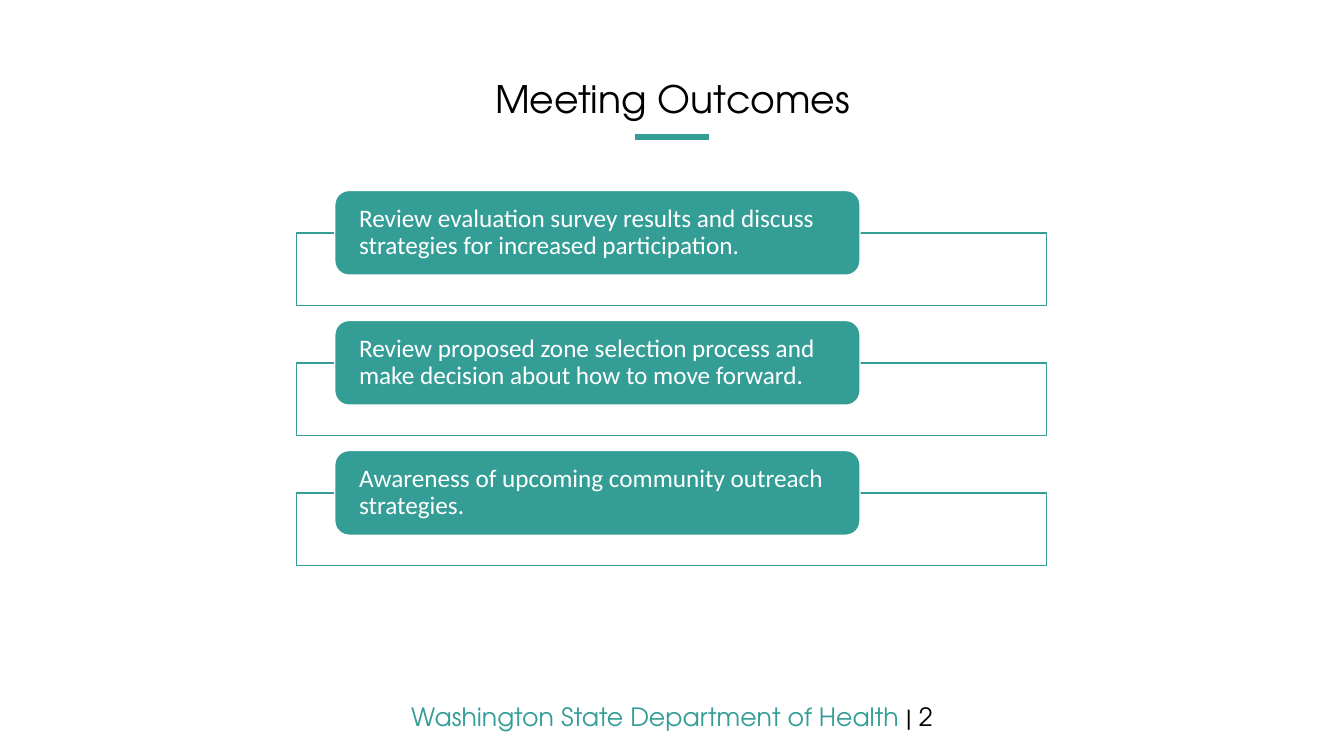
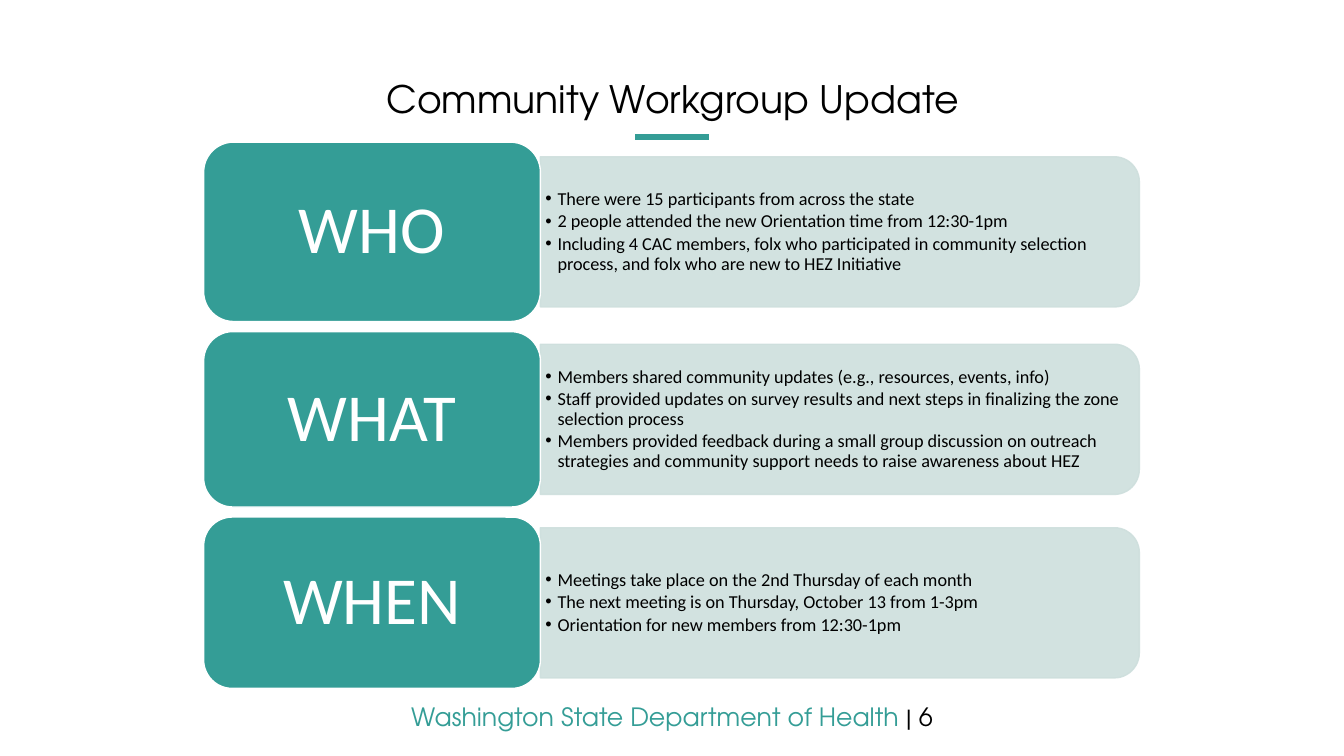
from dataclasses import dataclass

from lxml import etree
from pptx import Presentation
from pptx.dml.color import RGBColor
from pptx.enum.shapes import MSO_CONNECTOR, MSO_SHAPE
from pptx.enum.text import MSO_ANCHOR, MSO_AUTO_SIZE, PP_ALIGN
from pptx.oxml.ns import qn
from pptx.shapes.autoshape import Shape
from pptx.slide import Slide
from pptx.text.text import TextFrame, _Paragraph
from pptx.util import Inches, Pt

STRAIGHT = MSO_CONNECTOR.STRAIGHT
RECTANGLE = MSO_SHAPE.RECTANGLE
ROUNDED = MSO_SHAPE.ROUNDED_RECTANGLE
TOP_ROUNDED = MSO_SHAPE.ROUND_2_SAME_RECTANGLE
TOP, MIDDLE = MSO_ANCHOR.TOP, MSO_ANCHOR.MIDDLE
LEFT, CENTER = PP_ALIGN.LEFT, PP_ALIGN.CENTER
NO_AUTOFIT = MSO_AUTO_SIZE.NONE

TEAL, PALE_TEAL, WHITE, BLACK = "349D96", "CEDFDD", "FFFFFF", "000000"
HEADING_FONT, BODY_FONT = "TeX Gyre Adventor", "Calibri"
SLIDE_WIDTH, SLIDE_HEIGHT = 13.33, 7.5
LINE_SPACING = 0.9
TITLE_ONLY = 5


@dataclass(frozen=True)
class Box:
    left: float
    top: float
    width: float
    height: float

    def lengths(self) -> tuple[int, int, int, int]:
        return (Inches(self.left), Inches(self.top),
                Inches(self.width), Inches(self.height))


@dataclass(frozen=True)
class Topic:
    label: str
    height: float
    bullets: tuple[str, ...]


OUTCOMES = (
    "Review evaluation survey results and discuss strategies for increased participation.",
    "Review proposed zone selection process and make decision about how to move forward.",
    "Awareness of upcoming community outreach strategies.",
)

TOPICS = (
    Topic("WHO", 1.78, (
        "There were 15 participants from across the state",
        "2 people attended the new Orientation time from 12:30-1pm",
        "Including 4 CAC members, folx who participated in community selection "
        "process, and folx who are new to HEZ Initiative",
    )),
    Topic("WHAT", 1.74, (
        "Members shared community updates (e.g., resources, events, info)",
        "Staff provided updates on survey results and next steps in finalizing "
        "the zone selection process",
        "Members provided feedback during a small group discussion on outreach "
        "strategies and community support needs to raise awareness about HEZ",
    )),
    Topic("WHEN", 1.7, (
        "Meetings take place on the 2nd Thursday of each month",
        "The next meeting is on Thursday, October 13 from 1-3pm",
        "Orientation for new members from 12:30-1pm",
    )),
)


# Text and shape helpers
def rgb(color: str) -> RGBColor:
    return RGBColor.from_string(color)


def add_run(paragraph: _Paragraph, text: str, size: float, font: str, color: str) -> None:
    run = paragraph.add_run()
    run.text = text
    run.font.size = Pt(size)
    run.font.name = font
    run.font.color.rgb = rgb(color)


def format_frame(frame: TextFrame, anchor: MSO_ANCHOR,
                 horizontal: float = 0.1, vertical: float = 0.05) -> None:
    frame.word_wrap = True
    frame.auto_size = NO_AUTOFIT
    frame.vertical_anchor = anchor
    frame.margin_left = frame.margin_right = Inches(horizontal)
    frame.margin_top = frame.margin_bottom = Inches(vertical)


def add_filled_shape(slide: Slide, kind: MSO_SHAPE, box: Box, fill: str, line: str) -> Shape:
    shape = slide.shapes.add_shape(kind, *box.lengths())
    shape.shadow.inherit = False
    shape.fill.solid()
    shape.fill.fore_color.rgb = rgb(fill)
    shape.line.color.rgb = rgb(line)
    shape.line.width = Pt(1)
    return shape


def set_opacity(shape: Shape, color: str, percent: int) -> None:
    for element in shape._element.iter(qn("a:srgbClr")):
        if element.get("val") == color:
            etree.SubElement(element, qn("a:alpha"), val=str(percent * 1000))


def add_teal_box(slide: Slide, box: Box, text: str, size: float,
                 alignment: PP_ALIGN, vertical_margin: float) -> None:
    shape = add_filled_shape(slide, ROUNDED, box, TEAL, WHITE)
    format_frame(shape.text_frame, MIDDLE, 0.2, vertical_margin)
    paragraph = shape.text_frame.paragraphs[0]
    paragraph.alignment = alignment
    paragraph.line_spacing = LINE_SPACING
    add_run(paragraph, text, size, BODY_FONT, WHITE)


def set_bullet(paragraph: _Paragraph, indent: float) -> None:
    properties = paragraph._p.get_or_add_pPr()
    properties.set("marL", str(Inches(indent)))
    properties.set("indent", str(-Inches(indent)))
    etree.SubElement(properties, qn("a:buFont"), typeface="Arial")
    etree.SubElement(properties, qn("a:buChar"), char="•")


# Title, accent line and footer of every slide
def add_base_slide(presentation: Presentation, title: str, number: int) -> Slide:
    slide = presentation.slides.add_slide(presentation.slide_layouts[TITLE_ONLY])

    accent = slide.shapes.add_connector(
        STRAIGHT, Inches(6.3), Inches(1.36), Inches(7.03), Inches(1.36))
    accent.line.color.rgb = rgb(TEAL)
    accent.line.width = Pt(4)
    etree.SubElement(accent._element.spPr, qn("a:effectLst"))

    footer = slide.shapes.add_textbox(*Box(0, 6.91, SLIDE_WIDTH, 0.4).lengths())
    format_frame(footer.text_frame, TOP)
    paragraph = footer.text_frame.paragraphs[0]
    paragraph.alignment = CENTER
    add_run(paragraph, "Washington State Department of Health ", 18, HEADING_FONT, TEAL)
    add_run(paragraph, f"| {number}", 18, HEADING_FONT, BLACK)

    heading = slide.shapes.title
    heading.left, heading.top, heading.width, heading.height = Box(
        0.01, 0.74, 13.32, 0.53).lengths()
    format_frame(heading.text_frame, MIDDLE)
    paragraph = heading.text_frame.paragraphs[0]
    paragraph.alignment = CENTER
    paragraph.line_spacing = LINE_SPACING
    add_run(paragraph, title, 27, HEADING_FONT, BLACK)
    return slide


# Meeting outcomes: a teal box over each outlined frame
def add_outcomes(slide: Slide) -> None:
    for index, outcome in enumerate(OUTCOMES):
        top = 1.89 + index * 1.29
        frame = add_filled_shape(
            slide, RECTANGLE, Box(2.94, top + 0.42, 7.44, 0.72), WHITE, TEAL)
        set_opacity(frame, WHITE, 90)
        add_teal_box(slide, Box(3.32, top, 5.21, 0.84), outcome, 18, LEFT, 0)


# Workgroup topics: a label beside a panel of bullets
def add_panel(slide: Slide, left: float, middle: float, bullets: tuple[str, ...]) -> None:
    width, height = 5.94, 1.49
    # The quarter turn puts the rounded corners on the right
    upright = Box(left + (width - height) / 2, middle - width / 2, height, width)
    panel = add_filled_shape(slide, TOP_ROUNDED, upright, PALE_TEAL, PALE_TEAL)
    panel.rotation = 90
    set_opacity(panel, PALE_TEAL, 90)

    text_height = 1.34
    textbox = slide.shapes.add_textbox(
        *Box(left, middle - text_height / 2, 5.87, text_height).lengths())
    frame = textbox.text_frame
    format_frame(frame, MIDDLE, 0.05, 0.03)
    for index, bullet in enumerate(bullets):
        paragraph = frame.add_paragraph() if index else frame.paragraphs[0]
        paragraph.line_spacing = LINE_SPACING
        paragraph.space_after = Pt(2)
        set_bullet(paragraph, 0.12)
        add_run(paragraph, bullet, 13, BODY_FONT, BLACK)


def add_topics(slide: Slide) -> None:
    left, top, label_width, gap = 2.02, 1.41, 3.34, 0.1
    for topic in TOPICS:
        add_panel(slide, left + label_width, top + topic.height / 2, topic.bullets)
        add_teal_box(slide, Box(left, top, label_width, topic.height),
                     topic.label, 48, CENTER, 0.1)
        top += topic.height + gap


def main() -> None:
    presentation = Presentation()
    presentation.slide_width = Inches(SLIDE_WIDTH)
    presentation.slide_height = Inches(SLIDE_HEIGHT)
    add_outcomes(add_base_slide(presentation, "Meeting Outcomes", 2))
    add_topics(add_base_slide(presentation, "Community Workgroup Update", 6))
    presentation.save("out.pptx")


if __name__ == "__main__":
    main()
